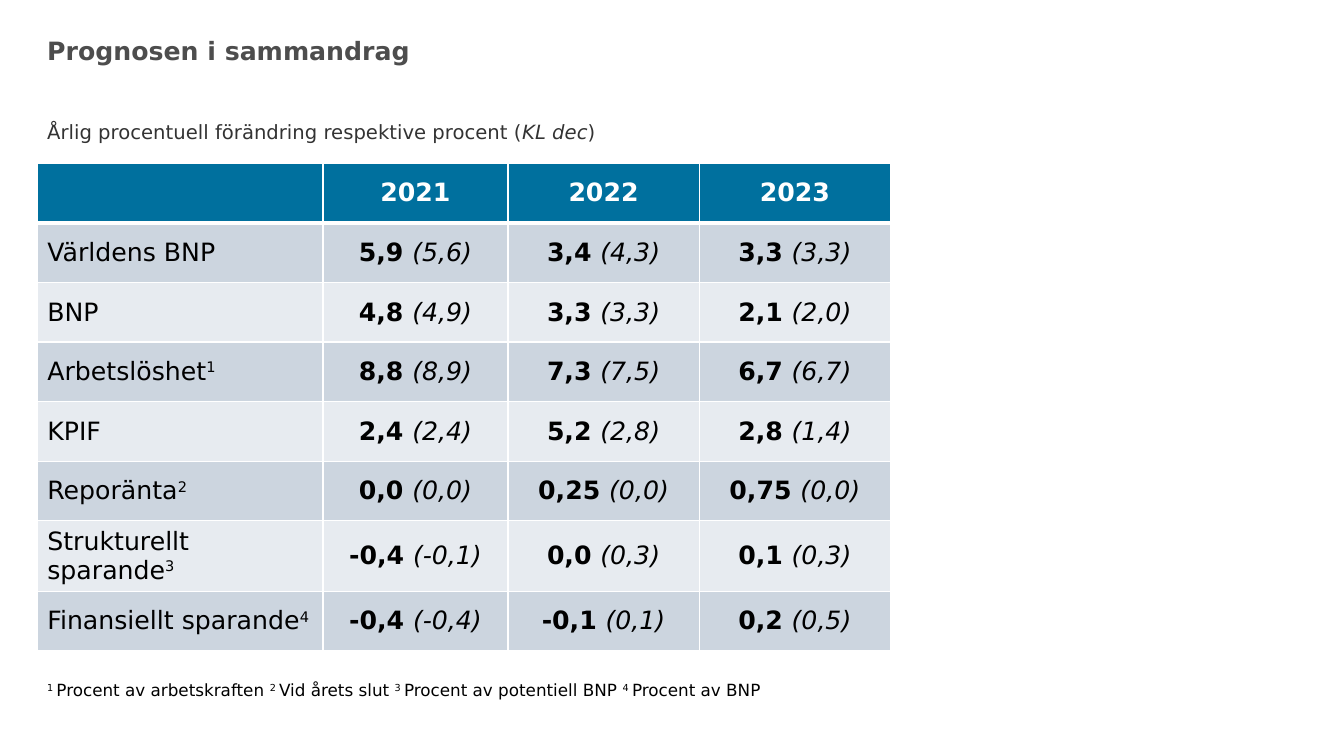
import dataclasses

import lxml.etree
import pptx
import pptx.dml.color
import pptx.enum.text
import pptx.oxml.ns
import pptx.util

Cm = pptx.util.Cm
Pt = pptx.util.Pt
Align = pptx.enum.text.PP_ALIGN
Anchor = pptx.enum.text.MSO_ANCHOR


@dataclasses.dataclass(frozen=True)
class Theme:
    """Font, type sizes in points and colours of the slide."""

    font: str = "DejaVu Sans"
    title_size: int = 18
    subtitle_size: int = 14
    table_size: int = 18
    note_size: int = 12
    title: str = "4D4D4D"
    subtitle: str = "333333"
    text: str = "000000"
    header: str = "00709E"
    bands: tuple = ("CCD5DF", "E7EBF0")
    white: str = "FFFFFF"


THEME = Theme()
BOLD = {"bold": True}
ITALIC = {"italic": True}
PLAIN = {}
RAISED = {"raised": True}

YEARS = ("2021", "2022", "2023")
COLUMN_SHARES = (7.2, 4.66, 4.82, 4.82)
FORECASTS = (
    ("Världens BNP", "", ("5,9", "5,6"), ("3,4", "4,3"), ("3,3", "3,3")),
    ("BNP", "", ("4,8", "4,9"), ("3,3", "3,3"), ("2,1", "2,0")),
    ("Arbetslöshet", "1", ("8,8", "8,9"), ("7,3", "7,5"), ("6,7", "6,7")),
    ("KPIF", "", ("2,4", "2,4"), ("5,2", "2,8"), ("2,8", "1,4")),
    ("Reporänta", "2", ("0,0", "0,0"), ("0,25", "0,0"), ("0,75", "0,0")),
    ("Strukturellt sparande", "3", ("-0,4", "-0,1"), ("0,0", "0,3"), ("0,1", "0,3")),
    ("Finansiellt sparande", "4", ("-0,4", "-0,4"), ("-0,1", "0,1"), ("0,2", "0,5")),
)
NOTES = ("Procent av arbetskraften ", "Vid årets slut ",
         "Procent av potentiell BNP ", "Procent av BNP")


def write_runs(paragraph, pieces, size, color):
    """Add (text, format) pieces to a paragraph as styled runs."""
    for text, style in pieces:
        run = paragraph.add_run()
        run.text = text
        values = {"name": THEME.font, "size": Pt(size), "bold": False, "italic": False}
        values.update(style)
        if values.pop("raised", False):
            run.font._element.set("baseline", "30000")
        for name, value in values.items():
            setattr(run.font, name, value)
        run.font.color.rgb = pptx.dml.color.RGBColor.from_string(color)


def add_text_line(slide, box, pieces, size, color, anchor=Anchor.TOP):
    """Place one paragraph of text in the given box."""
    frame = slide.shapes.add_textbox(*box).text_frame
    for name, value in {"word_wrap": True, "vertical_anchor": anchor}.items():
        setattr(frame, name, value)
    write_runs(frame.paragraphs[0], pieces, size, color)


def style_cell(cell, fill, top, bottom):
    """Give a cell its white borders, fill and middle anchor."""
    properties = cell._tc.get_or_add_tcPr()
    for side, points in {"L": 1, "R": 1, "T": top, "B": bottom}.items():
        line = lxml.etree.SubElement(
            properties, pptx.oxml.ns.qn(f"a:ln{side}"), w=str(Pt(points)))
        paint = lxml.etree.SubElement(line, pptx.oxml.ns.qn("a:solidFill"))
        lxml.etree.SubElement(paint, pptx.oxml.ns.qn("a:srgbClr"), val=THEME.white)
    cell.fill.solid()
    cell.fill.fore_color.rgb = pptx.dml.color.RGBColor.from_string(fill)
    cell.vertical_anchor = Anchor.MIDDLE


def forecast_cells():
    """Return the table's rows of cells, each a list of text pieces."""
    rows = [[[]] + [[(year, BOLD)] for year in YEARS]]
    for label, mark, *forecasts in FORECASTS:
        heading = [(label, PLAIN)] + ([(mark, RAISED)] if mark else [])
        rows.append([heading] + [[(f"{current} ", BOLD), (f"({previous})", ITALIC)]
                                 for current, previous in forecasts])
    return rows


def add_forecast_table(slide, box):
    """Fill the given box with the forecast table."""
    rows = forecast_cells()
    table = slide.shapes.add_table(len(rows), len(COLUMN_SHARES), *box).table
    for column, share in zip(table.columns, COLUMN_SHARES):
        column.width = round(box[2] * share / sum(COLUMN_SHARES))
    for r, cells in enumerate(rows):
        fill = THEME.bands[(r - 1) % 2] if r else THEME.header
        color = THEME.text if r else THEME.white
        for c, pieces in enumerate(cells):
            cell = table.cell(r, c)
            style_cell(cell, fill, 3 if r == 1 else 1, 3 if r == 0 else 1)
            paragraph = cell.text_frame.paragraphs[0]
            paragraph.alignment = Align.CENTER if c else Align.LEFT
            write_runs(paragraph, pieces, THEME.table_size, color)


def add_summary_slide(deck):
    """Add the slide that sums up the forecast."""
    slide = deck.slides.add_slide(deck.slide_layouts[6])
    left, width = Cm(0.94), Cm(24.05)
    add_text_line(slide, (left, Cm(0.76), width, Cm(1.4)),
                  [("Prognosen i sammandrag", BOLD)], THEME.title_size, THEME.title)
    add_text_line(slide, (left, Cm(2.34), width, Cm(1.4)),
                  [("Årlig procentuell förändring respektive procent (", PLAIN),
                   ("KL dec", ITALIC), (")", PLAIN)],
                  THEME.subtitle_size, THEME.subtitle, Anchor.BOTTOM)
    add_forecast_table(slide, (left, Cm(4.12), Cm(21.5), Cm(12)))
    notes = [piece for number, note in enumerate(NOTES, 1)
             for piece in ((f"{number} ", RAISED), (note, PLAIN))]
    add_text_line(slide, (left, Cm(17), width, Cm(1.72)),
                  notes, THEME.note_size, THEME.text)


def main():
    """Build and save the presentation."""
    deck = pptx.Presentation()
    deck.slide_width, deck.slide_height = Cm(33.87), Cm(19.05)
    add_summary_slide(deck)
    deck.save("out.pptx")


if __name__ == "__main__":
    main()
